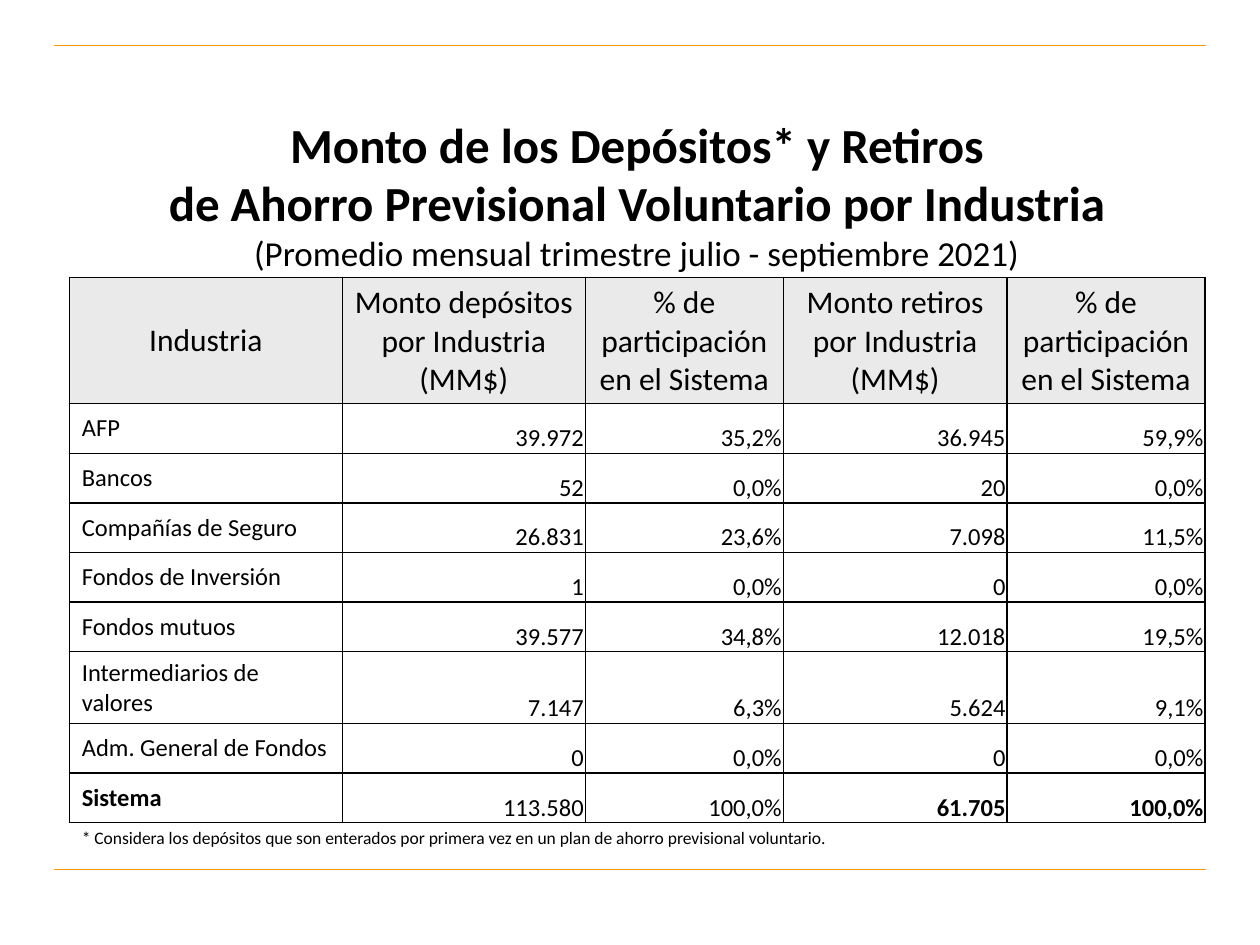
"""Build the slide on monthly voluntary pension savings by industry."""
from dataclasses import dataclass
from typing import Any

from lxml.etree import SubElement
from pptx import Presentation
from pptx.dml.color import RGBColor
from pptx.enum.shapes import MSO_CONNECTOR
from pptx.enum.text import MSO_ANCHOR, PP_ALIGN
from pptx.oxml.ns import qn
from pptx.util import Cm, Pt


@dataclass(frozen=True)
class Theme:
    face: str = "Calibri"
    ink: str = "000000"
    rule: str = "FF9900"
    head: str = "EAEAEA"
    paper: str = "FFFFFF"
    title: int = 28
    sub: int = 20
    label: int = 18
    body: int = 14
    note: int = 10


@dataclass(frozen=True)
class Style:
    size: int
    align: PP_ALIGN
    anchor: MSO_ANCHOR
    pad: tuple[float, float, float, float] = (0.25, 0.13, 0.25, 0.13)


@dataclass(frozen=True)
class Row:
    name: str
    paid: str
    share: str
    drawn: str
    ratio: str

    def cells(self) -> list[str]:
        return [self.name, self.paid, self.share, self.drawn, self.ratio]


THEME = Theme()
HEAD = Style(THEME.label, PP_ALIGN.CENTER, MSO_ANCHOR.MIDDLE)
NAME = Style(THEME.body, PP_ALIGN.LEFT, MSO_ANCHOR.MIDDLE)
VALUE = Style(THEME.body, PP_ALIGN.RIGHT, MSO_ANCHOR.BOTTOM, (0.03, 0.03, 0.03, 0))
SIDES = ("margin_left", "margin_top", "margin_right", "margin_bottom")
WIDTHS = (5.5, 4.9, 3.99, 4.51, 3.99)
RULES = (0.92, 17.53)
TITLE = ("Monto de los Depósitos* y Retiros",
         "de Ahorro Previsional Voluntario por Industria")
PERIOD = "(Promedio mensual trimestre julio - septiembre 2021)"
NOTE = ("* Considera los depósitos que son enterados por primera vez "
        "en un plan de ahorro previsional voluntario.")
SHARE = "% de\nparticipación en el Sistema"
ROWS = (
    Row("Industria", "Monto depósitos por Industria (MM$)", SHARE,
        "Monto retiros\npor Industria (MM$)", SHARE),
    Row("AFP", "39.972", "35,2%", "36.945", "59,9%"),
    Row("Bancos", "52", "0,0%", "20", "0,0%"),
    Row("Compañías de Seguro", "26.831", "23,6%", "7.098", "11,5%"),
    Row("Fondos de Inversión", "1", "0,0%", "0", "0,0%"),
    Row("Fondos mutuos", "39.577", "34,8%", "12.018", "19,5%"),
    Row("Intermediarios de valores", "7.147", "6,3%", "5.624", "9,1%"),
    Row("Adm. General de Fondos", "0", "0,0%", "0", "0,0%"),
    Row("Sistema", "113.580", "100,0%", "61.705", "100,0%"),
)
BOLD = (0, 3, 4)


def apply(item: Any, values: dict[str, Any]) -> None:
    """Set each named value on the item."""
    for key, value in values.items():
        setattr(item, key, value)


def ink(font: Any, size: int, bold: bool = False) -> None:
    """Give a font the theme face and colour."""
    apply(font, {"name": THEME.face, "size": Pt(size), "bold": bold})
    font.color.rgb = RGBColor.from_string(THEME.ink)


def rule(slide: Any, top: float) -> None:
    """Draw a thin rule across the slide."""
    line = slide.shapes.add_connector(
        MSO_CONNECTOR.STRAIGHT, Cm(1.09), Cm(top), Cm(24.31), Cm(top))
    line.line.color.rgb = RGBColor.from_string(THEME.rule)
    line.line.width = Pt(0.75)
    SubElement(line._element.spPr, qn("a:effectLst"))


def title(slide: Any) -> None:
    """Add the heading and its period line."""
    frame = slide.shapes.add_textbox(Cm(1.04), Cm(2.51), Cm(23.6), Cm(2.8)).text_frame
    apply(frame, {"word_wrap": True, "vertical_anchor": MSO_ANCHOR.MIDDLE})
    para = frame.paragraphs[0]
    para.alignment = PP_ALIGN.CENTER
    for text in TITLE:
        run = para.add_run()
        run.text = text
        ink(run.font, THEME.title, True)
        para.add_line_break()
    run = para.add_run()
    run.text = PERIOD
    ink(run.font, THEME.sub)


def border(cell: Any) -> None:
    """Outline all four sides of a cell."""
    props = cell._tc.get_or_add_tcPr()
    for side in ("lnL", "lnR", "lnT", "lnB"):
        line = SubElement(props, qn(f"a:{side}"), w=str(Pt(1)))
        fill = SubElement(line, qn("a:solidFill"))
        SubElement(fill, qn("a:srgbClr"), val=THEME.ink)


def fill(cell: Any, text: str, style: Style, back: str | None, bold: bool) -> None:
    """Write and format one table cell."""
    cell.text = text
    apply(cell, {"vertical_anchor": style.anchor})
    apply(cell, {side: Cm(pad) for side, pad in zip(SIDES, style.pad)})
    border(cell)
    if back:
        cell.fill.solid()
        cell.fill.fore_color.rgb = RGBColor.from_string(back)
    else:
        cell.fill.background()
    for para in cell.text_frame.paragraphs:
        para.alignment = style.align
        for run in para.runs:
            ink(run.font, style.size, bold)


def grid(slide: Any) -> None:
    """Add the table of deposits and withdrawals."""
    table = slide.shapes.add_table(
        len(ROWS), len(WIDTHS), Cm(1.4), Cm(5.59), Cm(sum(WIDTHS)), Cm(10.34)).table
    apply(table, {"first_row": False, "horz_banding": False})
    for col, width in zip(table.columns, WIDTHS):
        col.width = Cm(width)
    for i, row in enumerate(ROWS):
        table.rows[i].height = Cm(1 if i else 2.34)
        for j, text in enumerate(row.cells()):
            style = HEAD if i == 0 else VALUE if j else NAME
            plain = None if j in (2, 4) else THEME.paper
            back = plain if i else THEME.head
            fill(table.cell(i, j), text, style, back,
                 i == len(ROWS) - 1 and j in BOLD)


def note(slide: Any) -> None:
    """Add the footnote under the table."""
    frame = slide.shapes.add_textbox(Cm(1.4), Cm(16.54), Cm(15.75), Cm(1.12)).text_frame
    frame.word_wrap = False
    run = frame.paragraphs[0].add_run()
    run.text = NOTE
    ink(run.font, THEME.note)


def main() -> None:
    """Assemble and save the slide."""
    deck = Presentation()
    apply(deck, {"slide_width": Cm(25.4), "slide_height": Cm(19.05)})
    slide = deck.slides.add_slide(deck.slide_layouts[6])
    for top in RULES:
        rule(slide, top)
    title(slide)
    grid(slide)
    note(slide)
    deck.save("out.pptx")


if __name__ == "__main__":
    main()
